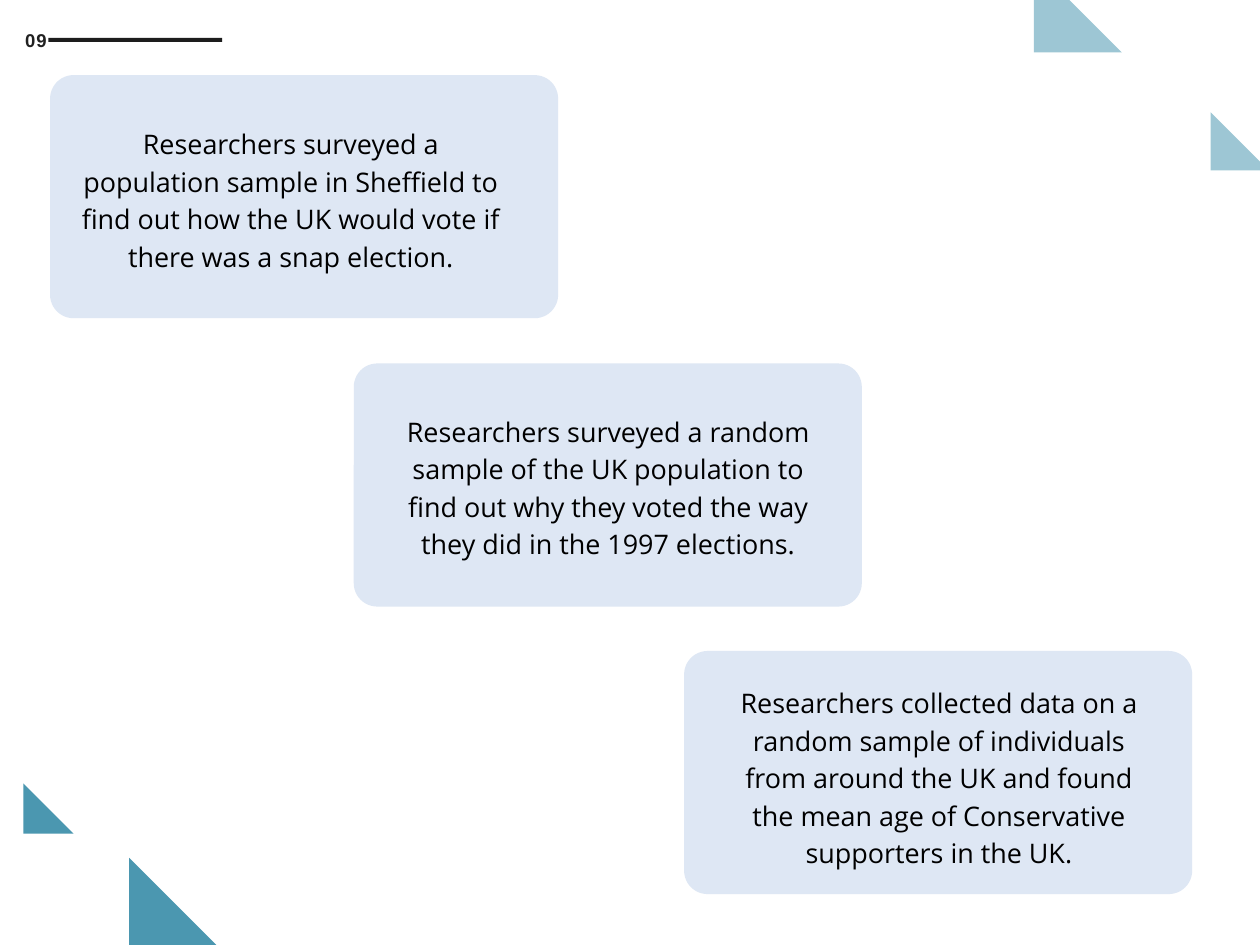
from lxml import etree
from pptx import Presentation
from pptx.dml.color import RGBColor
from pptx.enum import shapes, text
from pptx.oxml import ns
from pptx.util import Inches, Pt

COLOURS = {"card": "DEE7F4", "teal": "4B97B0", "bar": "1D1D1D",
           "number": "212121", "body": "000000"}
CARD_WIDTH, CARD_HEIGHT, CARD_RADIUS = 6.29, 3.01, 0.29

# card left, card top, then the text's left, top, width, height and wording
SCENARIOS = [
    (0.62, 0.93, (1.01, 1.51, 5.18, 1.86),
     "Researchers surveyed a population sample in Sheffield to find out "
     "how the UK would vote if there was a snap election."),
    (4.38, 4.5, (4.86, 5.07, 5.34, 1.86),
     "Researchers surveyed a random sample of the UK population to find out "
     "why they voted the way they did in the 1997 elections."),
    (8.47, 8.06, (9.03, 8.43, 5.19, 2.33),
     "Researchers collected data on a random sample of individuals from "
     "around the UK and found the mean age of Conservative supporters in "
     "the UK."),
]
WHOLE_TRIANGLES = [(0.29, 9.7, 0.62), (1.6, 10.62, 1.08)]
CUT_TRIANGLES = [
    [(12.8, -0.03), (13.21, -0.03), (13.89, 0.65), (12.8, 0.65)],
    [(14.99, 1.39), (15.6, 2), (15.6, 2.11), (14.99, 2.11)],
]


def paint(shape, colour, opacity=None):
    """Give a shape a plain fill, with opacity in percent, and no line."""
    shape.shadow.inherit = False
    shape.fill.solid()
    shape.fill.fore_color.rgb = RGBColor.from_string(COLOURS[colour])
    shape.line.fill.background()
    if opacity is not None:
        rgb = shape.fill._xPr.find(".//" + ns.qn("a:srgbClr"))
        etree.SubElement(rgb, ns.qn("a:alpha"), val=str(opacity * 1000))


def add_preset(slide, kind, left, top, width, height, colour):
    shape = slide.shapes.add_shape(kind, Inches(left), Inches(top),
                                   Inches(width), Inches(height))
    paint(shape, colour)
    return shape


def add_cut_triangle(slide, corners):
    """Draw a pale triangle that the slide's edge cuts off."""
    points = [(Inches(x), Inches(y)) for x, y in corners]
    builder = slide.shapes.build_freeform(*points[0])
    builder.add_line_segments(points[1:], close=True)
    paint(builder.convert_to_shape(), "teal", opacity=54)


def add_text(slide, wording, box, *, size, font, colour, bold=False,
             align=text.PP_ALIGN.LEFT, line_spacing=1.0, tracking=0, wrap=True):
    frame = slide.shapes.add_textbox(*map(Inches, box)).text_frame
    frame.word_wrap = wrap
    frame.margin_left = frame.margin_right = frame.margin_bottom = 0
    frame.margin_top = Inches(0.01)
    paragraph = frame.paragraphs[0]
    paragraph.alignment = align
    paragraph.line_spacing = line_spacing
    paragraph.space_before = Pt(1)
    run = paragraph.add_run()
    run.text = wording
    run.font.size = Pt(size)
    run.font.name = font
    run.font.bold = bold
    run.font.color.rgb = RGBColor.from_string(COLOURS[colour])
    if tracking:
        run.font._element.set("spc", str(round(tracking * 100)))


def add_scenario(slide, left, top, box, wording):
    card = add_preset(slide, shapes.MSO_SHAPE.ROUNDED_RECTANGLE, left, top,
                      CARD_WIDTH, CARD_HEIGHT, "card")
    card.adjustments[0] = CARD_RADIUS / CARD_HEIGHT
    add_text(slide, wording, box, size=24, font="Open Sans", colour="body",
             align=text.PP_ALIGN.CENTER, line_spacing=1.16)


def main():
    deck = Presentation()
    deck.slide_width, deck.slide_height = Inches(15.6), Inches(11.7)
    slide = deck.slides.add_slide(deck.slide_layouts[6])

    for left, top, side in WHOLE_TRIANGLES:
        add_preset(slide, shapes.MSO_SHAPE.RIGHT_TRIANGLE, left, top,
                   side, side, "teal")
    for corners in CUT_TRIANGLES:
        add_cut_triangle(slide, corners)
    add_preset(slide, shapes.MSO_SHAPE.RECTANGLE, 0.6, 0.47, 2.15, 0.05, "bar")
    add_text(slide, "09", (0.31, 0.35, 0.32, 0.29), size=16.5, font="Arial",
             colour="number", bold=True, tracking=1.1, wrap=False)
    for scenario in SCENARIOS:
        add_scenario(slide, *scenario)

    deck.save("out.pptx")


if __name__ == "__main__":
    main()
